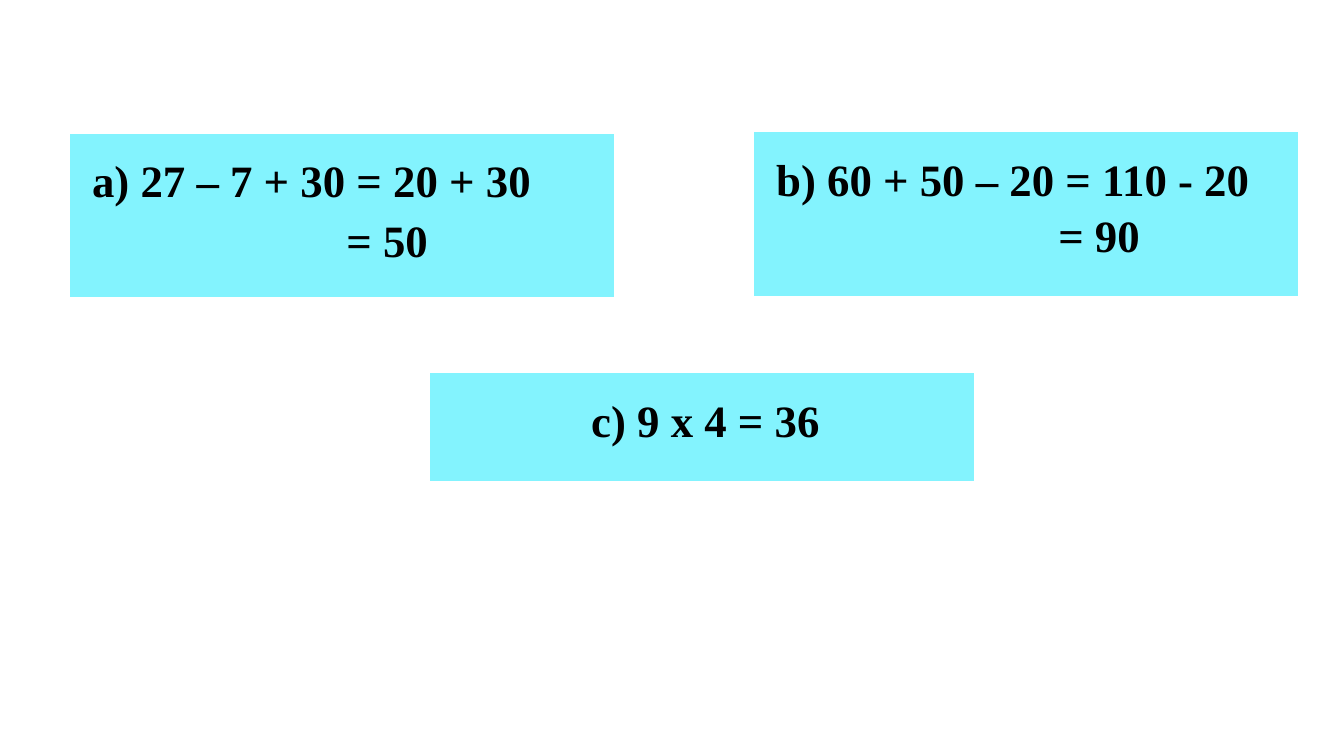
from pptx import Presentation
from pptx import util as u
from pptx.dml.color import RGBColor
from pptx.enum import shapes, text

COLOURS = {"panel": "83F3FE", "outline": "FFFFFF", "text": "000000"}
FONT = "Times New Roman"
PANEL_WIDTH = 13.79
LINE_WIDTH, LINE_HEIGHT = 13.28, 1.63
RESULT_WIDTH = 4.29

deck = Presentation()
deck.slide_width, deck.slide_height = u.Cm(33.87), u.Cm(19.05)
page = deck.slides.add_slide(deck.slide_layouts[6])


def add_panel(left, top, height):
    panel = page.shapes.add_shape(
        shapes.MSO_SHAPE.RECTANGLE,
        u.Cm(left), u.Cm(top), u.Cm(PANEL_WIDTH), u.Cm(height))
    panel.shadow.inherit = False
    panel.fill.solid()
    panel.fill.fore_color.rgb = RGBColor.from_string(COLOURS["panel"])
    panel.line.color.rgb = RGBColor.from_string(COLOURS["outline"])
    panel.line.width = u.Pt(2)


def add_line(words, left, top, width, align):
    box = page.shapes.add_textbox(
        u.Cm(left), u.Cm(top), u.Cm(width), u.Cm(LINE_HEIGHT))
    frame = box.text_frame
    frame.word_wrap = True
    frame.auto_size = text.MSO_AUTO_SIZE.SHAPE_TO_FIT_TEXT
    frame.text = words
    para = frame.paragraphs[0]
    para.alignment = align
    span = para.runs[0]
    span.font.name = FONT
    span.font.size = u.Pt(32)
    span.font.bold = True
    span.font.color.rgb = RGBColor.from_string(COLOURS["text"])


# Each sum: panel left, top, height, alignment, first line,
# then the result line with its left and top (if there is one)
LEFT, CENTER = text.PP_ALIGN.LEFT, text.PP_ALIGN.CENTER
sums = [
    (1.73, 3.33, 4.19, LEFT, "a) 27 – 7 + 30 = 20 + 30", ("= 50", 8.48, 5.23)),
    (18.97, 3.3, 4.19, LEFT, "b) 60 + 50 – 20 = 110 - 20", ("= 90", 26.42, 5.11)),
    (10.8, 9.37, 2.79, CENTER, "c) 9 x 4 = 36", None),
]

for left, top, height, align, words, result in sums:
    add_panel(left, top, height)
    add_line(words, left + 0.34, top + 0.4, LINE_WIDTH, align)
    if result:
        answer, answer_left, answer_top = result
        add_line(answer, answer_left, answer_top, RESULT_WIDTH, LEFT)

deck.save("out.pptx")
